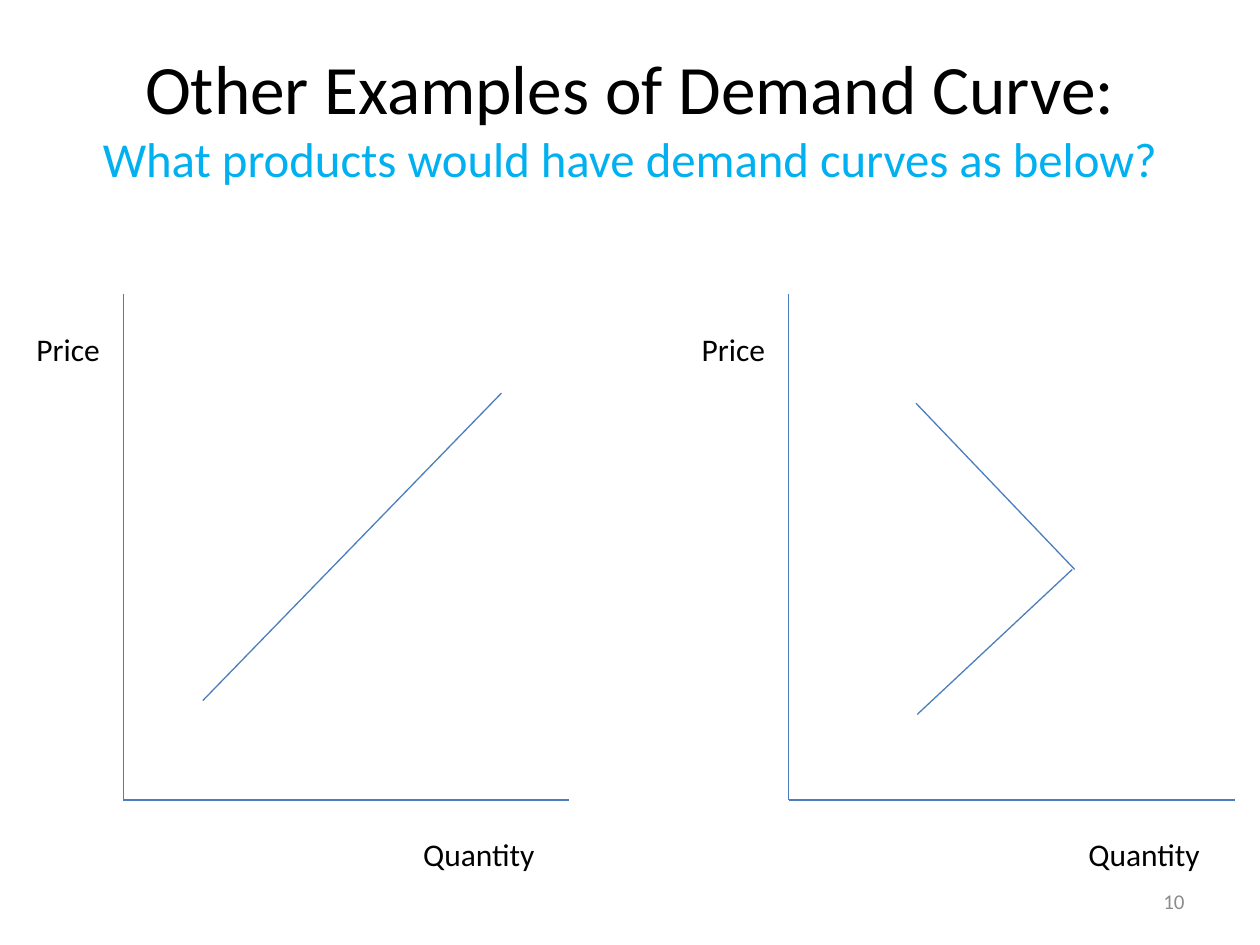
from lxml import etree
from pptx import Presentation
from pptx.dml.color import RGBColor
from pptx.enum.shapes import MSO_CONNECTOR
from pptx.enum.text import MSO_ANCHOR, MSO_AUTO_SIZE, PP_ALIGN
from pptx.oxml.ns import qn
from pptx.util import Inches, Pt

STRAIGHT = MSO_CONNECTOR.STRAIGHT
TOP, MIDDLE = MSO_ANCHOR.TOP, MSO_ANCHOR.MIDDLE
LEFT, CENTER, RIGHT = PP_ALIGN.LEFT, PP_ALIGN.CENTER, PP_ALIGN.RIGHT
NO_FIT, GROW = MSO_AUTO_SIZE.NONE, MSO_AUTO_SIZE.SHAPE_TO_FIT_TEXT
FONT = "Calibri"
COLORS = {"text": "000000", "question": "00B0F0", "number": "8C8C8C", "curve": "4B7EBC"}

prs = Presentation()
prs.slide_width, prs.slide_height = Inches(10), Inches(7.5)
slide = prs.slides.add_slide(prs.slide_layouts[6])


def add_text(lines, box, align=LEFT, anchor=TOP, wrap=True, fit=NO_FIT):
    """Add one paragraph; each line is (text, points, colour name)."""
    frame = slide.shapes.add_textbox(*map(Inches, box)).text_frame
    frame.word_wrap, frame.auto_size, frame.vertical_anchor = wrap, fit, anchor
    paragraph = frame.paragraphs[0]
    paragraph.alignment = align
    for index, (text, size, color) in enumerate(lines):
        if index:
            paragraph.add_line_break()
        run = paragraph.add_run()
        run.text = text
        run.font.name, run.font.size = FONT, Pt(size)
        run.font.color.rgb = RGBColor.from_string(COLORS[color])


def add_line(start, end):
    line = slide.shapes.add_connector(STRAIGHT, *map(Inches, (*start, *end)))
    line.line.color.rgb = RGBColor.from_string(COLORS["curve"])
    line.line.width = Pt(0.75)
    etree.SubElement(line._element.spPr, qn("a:effectLst"))


add_text([("Other Examples of Demand Curve:", 39.6, "text"),
          ("What products would have demand curves as below?", 27.9, "question")],
         (0.5, 0.3, 9, 1.25), align=CENTER, anchor=MIDDLE)
add_text([("10", 12, "number")], (7.17, 6.95, 2.33, 0.4), align=RIGHT, anchor=MIDDLE)

# Each graph: x of its price axis, then the segments of its demand curve
graphs = [
    (0.98, [((1.61, 5.56), (3.98, 3.12))]),
    (6.26, [((7.28, 5.67), (8.51, 4.52)), ((7.27, 3.2), (8.53, 4.52))]),
]
axis_top, axis_bottom, axis_length = 2.33, 6.35, 3.54

for axis_x, curve in graphs:
    origin = (axis_x, axis_bottom)
    add_line((axis_x, axis_top), origin)
    add_line(origin, (axis_x + axis_length, axis_bottom))
    add_text([("Price", 18, "text")], (axis_x - 0.79, 2.57, 0.71, 0.4),
             wrap=False, fit=GROW)
    add_text([("Quantity", 18, "text")], (axis_x + 2.28, 6.58, 1.1, 0.4),
             wrap=False, fit=GROW)
    for start, end in curve:
        add_line(start, end)

prs.save("out.pptx")
